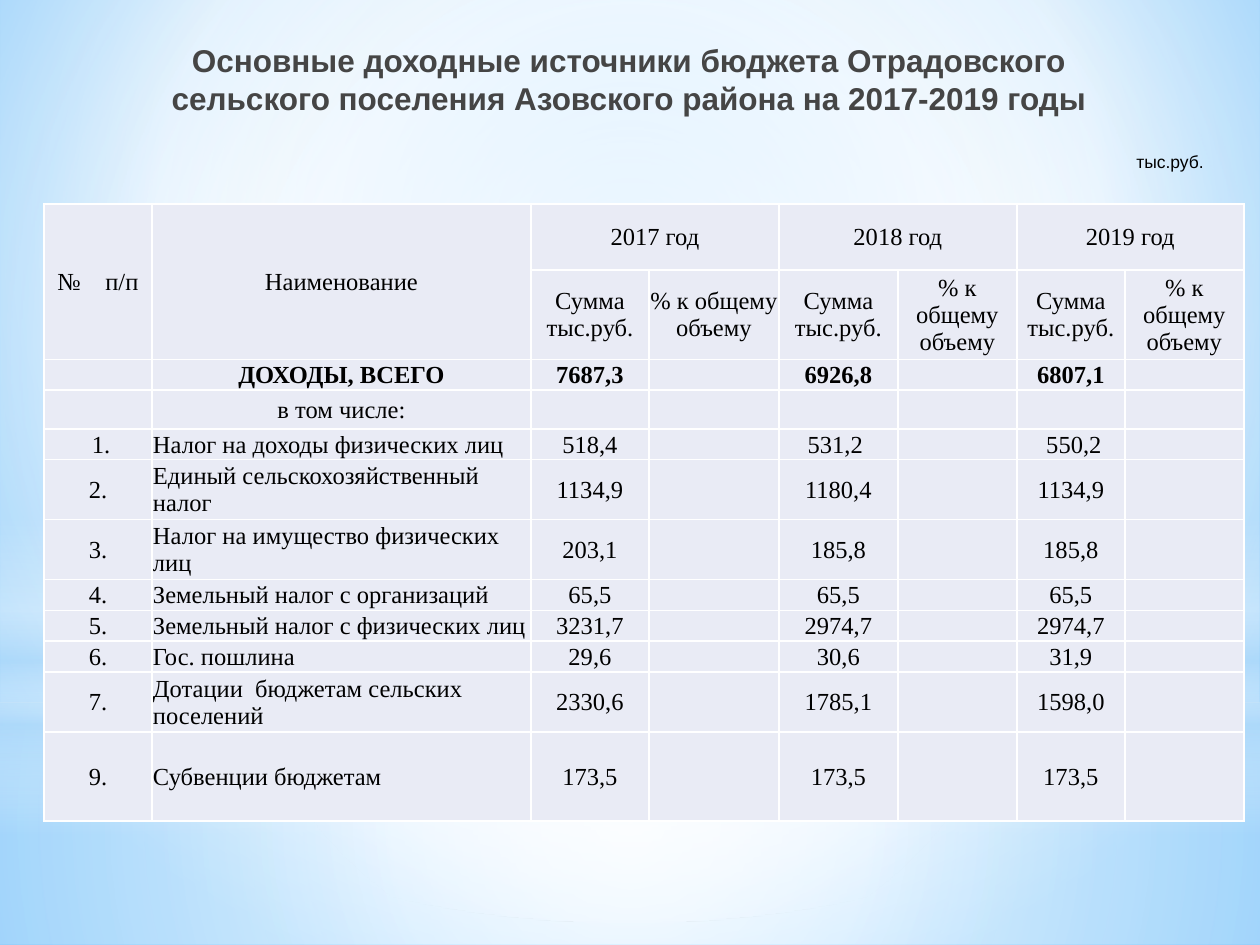
from lxml.etree import SubElement
from pptx import Presentation
from pptx.dml.color import RGBColor
from pptx.enum.shapes import MSO_SHAPE
from pptx.enum.text import MSO_ANCHOR, PP_ALIGN
from pptx.oxml import parse_xml
from pptx.oxml.ns import nsdecls, qn
from pptx.util import Emu, Pt

PX = 914400 // 126
COLORS = {
    "white": "FFFFFF", "mist": "B4DCFA", "sky": "9ED5FF", "azure": "5BB9FF",
    "title": "454545", "text": "000000", "cell": "E9EBF5",
}
CENTRE = (50, 50, 50, 50)
COLUMN_WIDTHS = [108, 379, 118, 130, 119, 119, 108, 119]
ROW_HEIGHTS = [66, 89, 31, 39, 30, 60, 60, 31, 30, 31, 60, 89]
YEARS = ["2017 год", "2018 год", "2019 год"]
INCOME = [
    ("", "ДОХОДЫ, ВСЕГО", "7687,3", "6926,8", "6807,1"),
    ("", "в том числе:", "", "", ""),
    (" 1.", "Налог на доходы физических лиц", "518,4", "531,2 ", " 550,2"),
    ("2.", "Единый сельскохозяйственный налог", "1134,9", "1180,4", "1134,9"),
    ("3.", "Налог на имущество физических лиц", "203,1", "185,8", "185,8"),
    ("4.", "Земельный налог с организаций", "65,5", "65,5", "65,5"),
    ("5.", "Земельный налог с физических лиц", "3231,7", "2974,7", "2974,7"),
    ("6.", "Гос. пошлина", "29,6", "30,6", "31,9"),
    ("7.", "Дотации  бюджетам сельских поселений", "2330,6", "1785,1", "1598,0"),
    ("9.", "Субвенции бюджетам", "173,5", "173,5", "173,5"),
]


def px(*lengths):
    """Turn pixel lengths into EMU."""
    return [Emu(length * PX) for length in lengths]


def gradient(stops, focus=None):
    """Make a gradient of (position, colour, opacity) stops, radial if it has a focus."""
    marks = "".join(
        f'<a:gs pos="{position * 1000}"><a:srgbClr val="{COLORS[color]}">'
        f'<a:alpha val="{opacity * 1000}"/></a:srgbClr></a:gs>'
        for position, color, opacity in stops
    )
    direction = '<a:lin ang="5400000" scaled="0"/>'
    if focus:
        sides = " ".join(f'{side}="{value * 1000}"' for side, value in zip("ltrb", focus))
        direction = f'<a:path path="circle"><a:fillToRect {sides}/></a:path>'
    return parse_xml(
        f'<a:gradFill {nsdecls("a")} rotWithShape="1"><a:gsLst>{marks}</a:gsLst>{direction}</a:gradFill>'
    )


def style_text(paragraph, font_name, size, color, align, bold=False):
    """Format a paragraph and its runs."""
    paragraph.alignment = align
    for run in paragraph.runs:
        run.font.name = font_name
        run.font.size = Pt(size)
        run.font.bold = bold
        run.font.color.rgb = RGBColor.from_string(COLORS[color])


def add_glow(slide, box, preset, stops, focus=None):
    """Add one translucent gradient layer."""
    glow = slide.shapes.add_shape(preset, *px(*box))
    glow.shadow.inherit = False
    glow.line.fill.background()
    glow.fill.background()
    properties = glow.element.spPr
    properties.replace(properties.find(qn("a:noFill")), gradient(stops, focus))


def add_backdrop(slide, width, height):
    """Fill the background and lay the sky glows over it."""
    slide.background.fill.solid()
    solid = next(slide.element.iter(qn("a:solidFill")))
    sky = [(0, "sky", 100), (60, "white", 100), (100, "azure", 100)]
    solid.getparent().replace(solid, gradient(sky, (20, 10, 20, 60)))
    horizon = 703
    add_glow(slide, (0, horizon, width, height - horizon), MSO_SHAPE.RECTANGLE,
             [(0, "white", 91), (37, "white", 76), (100, "mist", 79)], CENTRE)
    add_glow(slide, (0, 0, width, horizon), MSO_SHAPE.RECTANGLE,
             [(0, "white", 89), (48, "white", 62), (100, "mist", 79)], CENTRE)
    add_glow(slide, (0, 519, width, 315), MSO_SHAPE.RECTANGLE,
             [(0, "white", 0), (29, "white", 30), (45, "mist", 40),
              (55, "white", 26), (65, "mist", 60), (100, "white", 0)])
    add_glow(slide, (0, 220, width, horizon), MSO_SHAPE.OVAL,
             [(0, "white", 100), (56, "white", 0)], CENTRE)


def add_heading(slide, box):
    """Place the title in front of the backdrop."""
    title = slide.shapes.title
    slide.shapes.element.append(title.element)
    title.left, title.top, title.width, title.height = px(*box)
    frame = title.text_frame
    frame.text = ("Основные доходные источники бюджета Отрадовского "
                  "сельского поселения Азовского района на 2017-2019 годы")
    frame.word_wrap = True
    frame.vertical_anchor = MSO_ANCHOR.TOP
    style_text(frame.paragraphs[0], "Arial", 18, "title", PP_ALIGN.CENTER, True)


def add_unit_note(slide, box):
    """Place the unit of measure above the table."""
    frame = slide.shapes.add_textbox(*px(*box)).text_frame
    frame.text = "тыс.руб."
    frame.word_wrap = True
    style_text(frame.paragraphs[0], "Arial", 10, "text", PP_ALIGN.RIGHT)


def fill_cell(cell, text, align=PP_ALIGN.CENTER, bold=False):
    """Write and format one table cell with white borders."""
    cell.text_frame.text = text
    cell.vertical_anchor = MSO_ANCHOR.MIDDLE
    cell.margin_left, cell.margin_right, cell.margin_top, cell.margin_bottom = px(1, 1, 1, 0)
    properties = cell._tc.get_or_add_tcPr()
    for side in ("lnL", "lnR", "lnT", "lnB"):
        border = SubElement(properties, qn(f"a:{side}"), w=str(Pt(1)))
        SubElement(SubElement(border, qn("a:solidFill")), qn("a:srgbClr"), val=COLORS["white"])
    cell.fill.solid()
    cell.fill.fore_color.rgb = RGBColor.from_string(COLORS["cell"])
    paragraph = cell.text_frame.paragraphs[0]
    style_text(paragraph, "Times New Roman", 14, "text", align, bold)
    paragraph._p.get_or_add_endParaRPr().set("sz", "1400")


def add_income_table(slide, left, top):
    """Build the income table with a two-row heading."""
    headings = [
        ["№    п/п", "Наименование"] + [text for year in YEARS for text in (year, "")],
        ["", ""] + ["Сумма тыс.руб.", "% к общему объему"] * len(YEARS),
    ]
    body = [[number, name] + [text for amount in amounts for text in (amount, "")]
            for number, name, *amounts in INCOME]
    rows = headings + body
    table = slide.shapes.add_table(
        len(rows), len(COLUMN_WIDTHS), *px(left, top, sum(COLUMN_WIDTHS), sum(ROW_HEIGHTS))
    ).table
    table.first_row = table.horz_banding = False
    for column, width in zip(table.columns, px(*COLUMN_WIDTHS)):
        column.width = width
    for row, height in zip(table.rows, px(*ROW_HEIGHTS)):
        row.height = height
    total_row = len(headings)
    for r, texts in enumerate(rows):
        for c, text in enumerate(texts):
            is_source_name = c == 1 and r > total_row + 1
            align = PP_ALIGN.LEFT if is_source_name else PP_ALIGN.CENTER
            fill_cell(table.cell(r, c), text, align, r == total_row)
    for c in range(2):
        table.cell(0, c).merge(table.cell(1, c))
    for c in range(2, len(COLUMN_WIDTHS), 2):
        table.cell(0, c).merge(table.cell(0, c + 1))


def main():
    """Build and save the budget income slide."""
    width, height = 1260, 945
    deck = Presentation()
    deck.slide_width, deck.slide_height = px(width, height)
    slide = deck.slides.add_slide(deck.slide_layouts[5])
    add_backdrop(slide, width, height)
    add_heading(slide, (152, 35, 954, 158))
    add_unit_note(slide, (998, 145, 218, 34))
    add_income_table(slide, 44, 204)
    deck.save("out.pptx")


if __name__ == "__main__":
    main()
